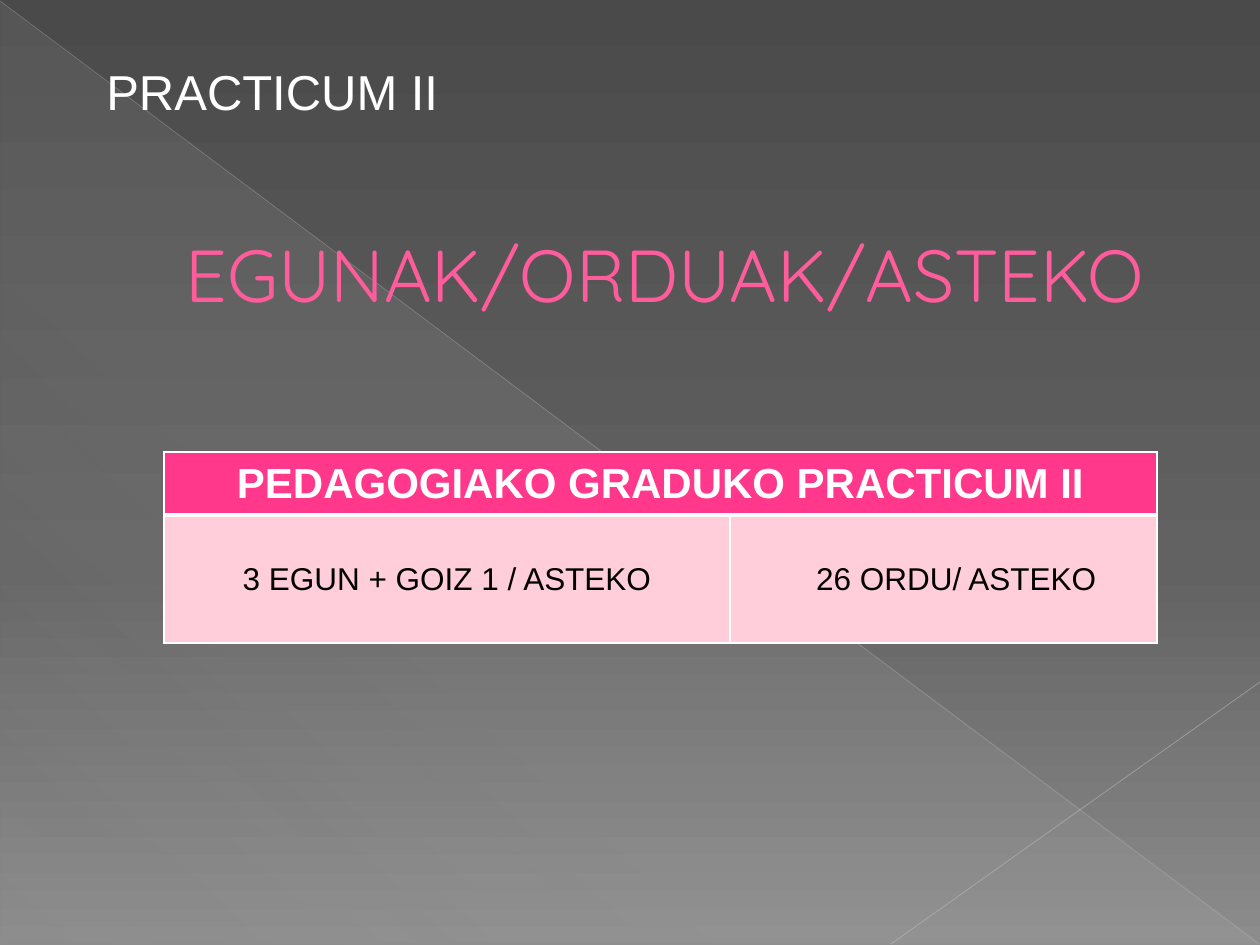
from lxml.etree import SubElement
from pptx import Presentation
from pptx.dml.color import RGBColor
from pptx.enum.shapes import MSO_CONNECTOR, MSO_SHAPE
from pptx.enum.text import MSO_ANCHOR, PP_ALIGN
from pptx.oxml.ns import qn
from pptx.util import Pt

WHITE = "FFFFFF"


def px(n):
    return round(n * 914400 / 126)


def rgb(value):
    return RGBColor.from_string(value)


def add(parent, tag, **attrs):
    return SubElement(parent, qn(tag), {k: str(v) for k, v in attrs.items()})


def add_color(parent, color, alpha=100):
    clr = add(parent, "a:srgbClr", val=color)
    if alpha < 100:
        add(clr, "a:alpha", val=alpha * 1000)


def add_line(parent, tag, color, width):
    ln = add(parent, tag, w=Pt(width))
    add_color(add(ln, "a:solidFill"), color)
    return ln


def set_gradient(props, stops, angle):
    solid = props.find(qn("a:solidFill"))
    grad = add(props, "a:gradFill", rotWithShape=1)
    props.replace(solid, grad)
    stop_list = add(grad, "a:gsLst")
    for pos, color, alpha in stops:
        add_color(add(stop_list, "a:gs", pos=pos * 1000), color, alpha)
    add(grad, "a:lin", ang=angle * 60000, scaled=0)


def style_text(tf, text, font, size, color, align=PP_ALIGN.LEFT, bold=False):
    p = tf.paragraphs[0]
    r = p.add_run()
    r.text = text
    p.alignment = align
    p.font.name = font
    p.font.size = Pt(size)
    p.font.bold = bold
    p.font.color.rgb = rgb(color)
    return r


def add_diagonal(s, x1, y1, x2, y2, color, width, alpha):
    line = s.shapes.add_connector(MSO_CONNECTOR.STRAIGHT, px(x1), px(y1), px(x2), px(y2))
    line.line.width = Pt(width)
    line.line.color.rgb = rgb(color)
    spPr = line._element.spPr
    add(spPr.find(".//" + qn("a:srgbClr")), "a:alpha", val=alpha * 1000)
    add(spPr, "a:effectLst")


def add_backdrop(s, w, h):
    s.background.fill.solid()
    s.background.fill.fore_color.rgb = rgb("4A4A4A")
    bg = s._element.find(".//" + qn("p:bgPr"))
    set_gradient(bg, [(0, "4A4A4A", 100), (60, "626262", 100), (100, "8C8C8C", 100)], 90)

    sp = s.shapes.add_shape(MSO_SHAPE.RIGHT_TRIANGLE, px(1), px(2), px(w - 1), px(h - 3))
    sp.shadow.inherit = False
    sp.line.fill.background()
    sp.fill.solid()
    set_gradient(sp._element.spPr, [(0, "D2D2D2", 10), (70, "D2D2D2", 8), (100, "D2D2D2", 1)], 133)

    add_diagonal(s, 0, 1, w - 1, h - 1, "BFBFBF", 0.39, 35)
    add_diagonal(s, w, 682, 891, h - 1, "C6C6C6", 0.47, 45)


def add_label(s, x, y, w, h):
    tf = s.shapes.add_textbox(px(x), px(y), px(w), px(h)).text_frame
    tf.word_wrap = True
    style_text(tf, "PRACTICUM II", "Arial", 28, WHITE)


def add_title(s, x, y, w, h):
    tf = s.shapes.add_textbox(px(x), px(y), px(w), px(h)).text_frame
    tf.word_wrap = True
    tf.vertical_anchor = MSO_ANCHOR.MIDDLE
    tf.margin_left = px(80)
    r = style_text(tf, "EGUNAK/ORDUAK/ASTEKO", "Quicksand", 42, "FF5C9C", PP_ALIGN.CENTER)
    rPr = r._r.get_or_add_rPr()
    add_line(rPr, "a:ln", "B12761", 0.5)


def style_cell(cell, fill, top, bottom):
    cell.fill.solid()
    cell.fill.fore_color.rgb = rgb(fill)
    cell.vertical_anchor = MSO_ANCHOR.MIDDLE
    tcPr = cell._tc.get_or_add_tcPr()
    borders = [("a:lnL", 1), ("a:lnR", 1), ("a:lnT", top), ("a:lnB", bottom)]
    for i, (tag, width) in enumerate(borders):
        tcPr.insert(i, add_line(tcPr, tag, WHITE, width))


def add_schedule(s, x, y, widths, heights):
    frame = s.shapes.add_table(2, 2, px(x), px(y), px(sum(widths)), px(sum(heights)))
    table = frame.table
    for col, w in zip(table.columns, widths):
        col.width = px(w)
    for row, h in zip(table.rows, heights):
        row.height = px(h)

    header = table.cell(0, 0)
    header.merge(table.cell(0, 1))
    style_text(header.text_frame, "PEDAGOGIAKO GRADUKO PRACTICUM II",
               "Arial", 24, WHITE, PP_ALIGN.CENTER, True)
    for i, text in enumerate(["3 EGUN + GOIZ 1 / ASTEKO", "26 ORDU/ ASTEKO"]):
        style_cell(table.cell(0, i), "FF388C", 1, 3)
        cell = table.cell(1, i)
        style_cell(cell, "FFCEDA", 3, 1)
        style_text(cell.text_frame, text, "Arial", 18, "000000", PP_ALIGN.CENTER)
    table.cell(1, 1).margin_left = px(38)


def main():
    prs = Presentation()
    prs.slide_width, prs.slide_height = px(1260), px(945)
    s = prs.slides.add_slide(prs.slide_layouts[6])
    add_backdrop(s, 1260, 945)
    add_title(s, 64, 204, 1134, 139)
    add_schedule(s, 164, 452, [566, 427], [59, 128])
    add_label(s, 94, 55, 387, 72)
    prs.save("out.pptx")


if __name__ == "__main__":
    main()
